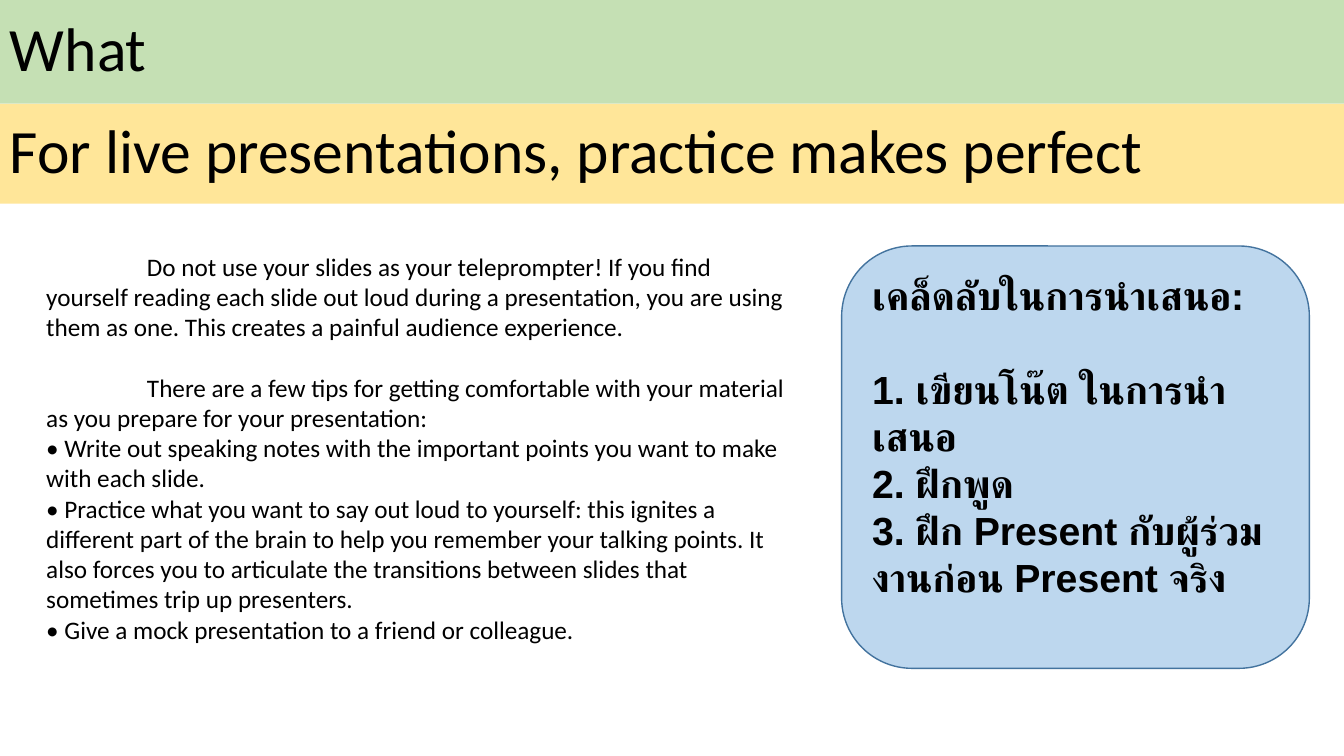
"""Build a slide with tips on practising for live presentations."""
from pptx import Presentation
from pptx.dml.color import RGBColor
from pptx.enum.shapes import MSO_SHAPE
from pptx.enum.text import MSO_ANCHOR, MSO_AUTO_SIZE, PP_ALIGN
from pptx.util import Pt

GREEN = RGBColor(0xC5, 0xE0, 0xB4)
YELLOW = RGBColor(0xFF, 0xE6, 0x99)
BLUE = RGBColor(0xBD, 0xD7, 0xEE)
BLUE_LINE = RGBColor(0x43, 0x73, 0x9E)
BLACK = RGBColor(0, 0, 0)

BANDS = [
    ("What", 0, 74.16, GREEN),
    ("For live presentations, practice makes perfect", 74.16, 71.28, YELLOW),
]
INTRO = [
    ("Do not use your slides as your teleprompter! If you find yourself reading each slide out loud "
     "during a presentation, you are using them as one. This creates a painful audience experience.", 21.6),
    ("There are a few tips for getting comfortable with your material as you prepare for your presentation:", 0),
]
TIPS = [
    "• Write out speaking notes with the important points you want to make with each slide.",
    "• Practice what you want to say out loud to yourself: this ignites a different part of the brain "
    "to help you remember your talking points. It also forces you to articulate the transitions "
    "between slides that sometimes trip up presenters.",
    "• Give a mock presentation to a friend or colleague.",
]
THAI_TIPS = [
    ("เคล็ดลับในการนำเสนอ:", 33.5),
    ("1. เขียนโน๊ต ในการนำเสนอ", 0),
    ("2. ฝึกพูด", 0),
    ("3. ฝึก Present กับผู้ร่วมงานก่อน Present จริง", 0),
]


def add_box(kind, left, top, width, height, fill, anchor):
    sp = s.shapes.add_shape(kind, Pt(left), Pt(top), Pt(width), Pt(height))
    sp.shadow.inherit = False
    sp.fill.solid()
    sp.fill.fore_color.rgb = fill
    sp.line.fill.background()
    sp.text_frame.word_wrap = True
    sp.text_frame.vertical_anchor = anchor
    return sp


def add_text(tf, text, size, font="Calibri", bold=False, after=0):
    p = tf.paragraphs[0]
    if p.runs:
        p = tf.add_paragraph()
    p.alignment = PP_ALIGN.LEFT
    p.space_after = Pt(after)
    r = p.add_run()
    r.text = text
    r.font.name = font
    r.font.size = Pt(size)
    r.font.bold = bold
    r.font.color.rgb = BLACK
    return p


prs = Presentation()
prs.slide_width = Pt(960)
prs.slide_height = Pt(540)
s = prs.slides.add_slide(prs.slide_layouts[6])

for text, top, height, fill in BANDS:
    band = add_box(MSO_SHAPE.RECTANGLE, 0, top, 960, height, fill, MSO_ANCHOR.MIDDLE)
    p = add_text(band.text_frame, text, 44)
    p.line_spacing = 0.9

body = s.shapes.add_textbox(Pt(25.92), Pt(175.68), Pt(541.44), Pt(301.68))
tf = body.text_frame
tf.word_wrap = True
tf.auto_size = MSO_AUTO_SIZE.SHAPE_TO_FIT_TEXT
for text, after in INTRO:
    p = add_text(tf, text, 18, after=after)
    pPr = p._p.get_or_add_pPr()
    pPr.set("marL", "0")
    pPr.set("indent", str(Pt(72)))
for text in TIPS:
    add_text(tf, text, 18)

card = add_box(MSO_SHAPE.FLOWCHART_ALTERNATE_PROCESS, 601.2, 175.68, 334.08, 301.68, BLUE, MSO_ANCHOR.TOP)
card.line.color.rgb = BLUE_LINE
card.line.width = Pt(1)
for text, after in THAI_TIPS:
    add_text(card.text_frame, text, 28, "Arial", True, after)

prs.save("out.pptx")
